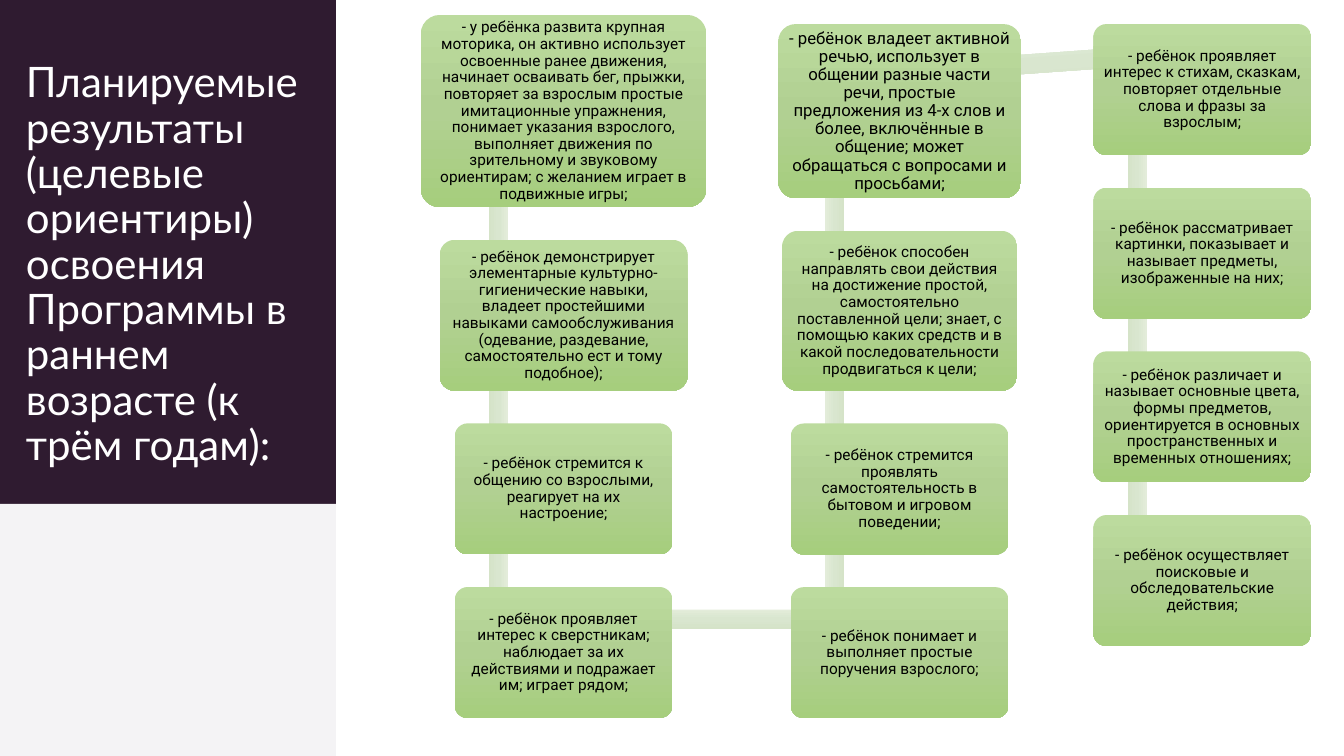
from copy import deepcopy
from dataclasses import dataclass
from itertools import pairwise
from math import atan2, degrees, hypot

from pptx import Presentation
from pptx.dml.color import RGBColor
from pptx.enum.shapes import MSO_SHAPE
from pptx.enum.text import MSO_ANCHOR, PP_ALIGN
from pptx.oxml.ns import qn
from pptx.util import Pt


@dataclass(frozen=True)
class Theme:
    panel: str = "2F1B30"
    panel_foot: str = "F4F3F5"
    title_text: str = "FFFFFF"
    goal_text: str = "000000"
    goal_fill: tuple = ("BCDB9E", "B1D092", "A6CE7D")
    link_fill: tuple = ("E3ECDA", "D9E6CF", "D5E3C8")
    title_font: str = "Lato"
    goal_font: str = "Roboto"
    title_size: float = 30
    goal_size: float = 11
    large_goal_size: float = 12


THEME = Theme()

# Layout of the goal chain, in points
GAP = 23.3
LINK_WIDTH = 13.9
LINK_SHIFT = (-46.5, -23.8)  # link ends, measured from a goal's centre


@dataclass
class Goal:
    text: str
    width: float = 155.7
    height: float = 93.6
    size: float = THEME.goal_size
    center: float = 0
    top: float = 0

    def link_end(self):
        return self.center + LINK_SHIFT[0], self.top + self.height / 2 + LINK_SHIFT[1]


# Columns: centre, top, goals from top to bottom
COLUMNS = [
    (402.6, 10.7, [
        Goal("- у ребёнка развита крупная моторика, он активно использует освоенные ранее "
             "движения, начинает осваивать бег, прыжки, повторяет за взрослым простые "
             "имитационные упражнения, понимает указания взрослого, выполняет движения по "
             "зрительному и звуковому ориентирам; с желанием играет в подвижные игры;",
             204.2, 137.3),
        Goal("- ребёнок демонстрирует элементарные культурно-гигиенические навыки, владеет "
             "простейшими навыками самообслуживания (одевание, раздевание, самостоятельно "
             "ест и тому подобное);", 177.2, 107.8),
        Goal("- ребёнок стремится к общению со взрослыми, реагирует на их настроение;"),
        Goal("- ребёнок проявляет интерес к сверстникам; наблюдает за их действиями и "
             "подражает им; играет рядом;"),
    ]),
    (642.6, 17.2, [
        Goal("- ребёнок владеет активной речью, использует в общении разные части речи, "
             "простые предложения из 4-х слов и более, включённые в общение; может "
             "обращаться с вопросами и просьбами;", 173.5, 124.4, THEME.large_goal_size),
        Goal("- ребёнок способен направлять свои действия на достижение простой, "
             "самостоятельно поставленной цели; знает, с помощью каких средств и в какой "
             "последовательности продвигаться к цели;", 168, 114.3),
        Goal("- ребёнок стремится проявлять самостоятельность в бытовом и игровом поведении;"),
        Goal("- ребёнок понимает и выполняет простые поручения взрослого;"),
    ]),
    (858.8, 17.2, [
        Goal("- ребёнок проявляет интерес к стихам, сказкам, повторяет отдельные слова и "
             "фразы за взрослым;"),
        Goal("- ребёнок рассматривает картинки, показывает и называет предметы, "
             "изображенные на них;"),
        Goal("- ребёнок различает и называет основные цвета, формы предметов, "
             "ориентируется в основных пространственных и временных отношениях;"),
        Goal("- ребёнок осуществляет поисковые и обследовательские действия;"),
    ]),
]


class SlideBuilder:
    def __init__(self, slide, theme):
        self.slide = slide
        self.theme = theme

    def shape(self, kind, left, top, width, height):
        shape = self.slide.shapes.add_shape(kind, Pt(left), Pt(top), Pt(width), Pt(height))
        shape.shadow.inherit = False
        shape.line.fill.background()
        return shape

    def panel(self, left, top, width, height, color):
        panel = self.shape(MSO_SHAPE.RECTANGLE, left, top, width, height)
        panel.fill.solid()
        panel.fill.fore_color.rgb = RGBColor.from_string(color)

    def shade(self, shape, colors):
        """Fill from top to bottom with three evenly spaced colours."""
        shape.fill.gradient()
        shape.fill.gradient_angle = 270
        first = next(shape._element.spPr.iter(qn("a:gs")))
        first.addnext(deepcopy(first))
        for stop, color, position in zip(shape.fill.gradient_stops, colors, (0, 0.5, 1)):
            stop.color.rgb = RGBColor.from_string(color)
            stop.position = position

    def add_text(self, frame, text, font, size, color, align, anchor):
        frame.word_wrap = True
        frame.vertical_anchor = anchor
        paragraph = frame.paragraphs[0]
        paragraph.alignment = align
        paragraph.line_spacing = 0.9
        run = paragraph.add_run()
        run.text = text
        run.font.name = font
        run.font.size = Pt(size)
        run.font.color.rgb = RGBColor.from_string(color)

    def title(self, text, left, top, width, height):
        title = self.slide.shapes.add_textbox(Pt(left), Pt(top), Pt(width), Pt(height))
        self.add_text(title.text_frame, text, self.theme.title_font, self.theme.title_size,
                      self.theme.title_text, PP_ALIGN.LEFT, MSO_ANCHOR.BOTTOM)

    def link(self, start, end):
        (x1, y1), (x2, y2) = start.link_end(), end.link_end()
        length = hypot(x2 - x1, y2 - y1)
        link = self.shape(MSO_SHAPE.RECTANGLE, (x1 + x2 - length) / 2,
                          (y1 + y2 - LINK_WIDTH) / 2, length, LINK_WIDTH)
        link.rotation = degrees(atan2(y2 - y1, x2 - x1)) % 360
        self.shade(link, self.theme.link_fill)

    def goal(self, goal):
        box = self.shape(MSO_SHAPE.ROUNDED_RECTANGLE, goal.center - goal.width / 2,
                         goal.top, goal.width, goal.height)
        box.adjustments[0] = 0.1
        self.shade(box, self.theme.goal_fill)
        frame = box.text_frame
        frame.margin_left = frame.margin_right = Pt(0.3 * goal.size)
        frame.margin_top = frame.margin_bottom = Pt(0.3 * goal.size)
        self.add_text(frame, goal.text, self.theme.goal_font, goal.size,
                      self.theme.goal_text, PP_ALIGN.CENTER, MSO_ANCHOR.MIDDLE)


def main():
    deck = Presentation()
    deck.slide_width, deck.slide_height = Pt(960), Pt(540)
    builder = SlideBuilder(deck.slides.add_slide(deck.slide_layouts[6]), THEME)

    # Side panel with the title
    builder.panel(0, 0, 240, 360, THEME.panel)
    builder.panel(0, 360, 240, 180, THEME.panel_foot)
    builder.title("Планируемые результаты (целевые ориентиры) освоения Программы "
                  "в раннем возрасте (к трём годам):", 11.5, 28.8, 211.7, 310.3)

    # Stack the goals in columns
    for center, top, goals in COLUMNS:
        for goal in goals:
            goal.center, goal.top = center, top
            top += goal.height + GAP

    # The chain runs down, up and down again; links lie behind the goals
    down, up, down_again = (goals for _, _, goals in COLUMNS)
    chain = down + up[::-1] + down_again
    for start, end in pairwise(chain):
        builder.link(start, end)
    for goal in chain:
        builder.goal(goal)

    deck.save("out.pptx")


if __name__ == "__main__":
    main()
